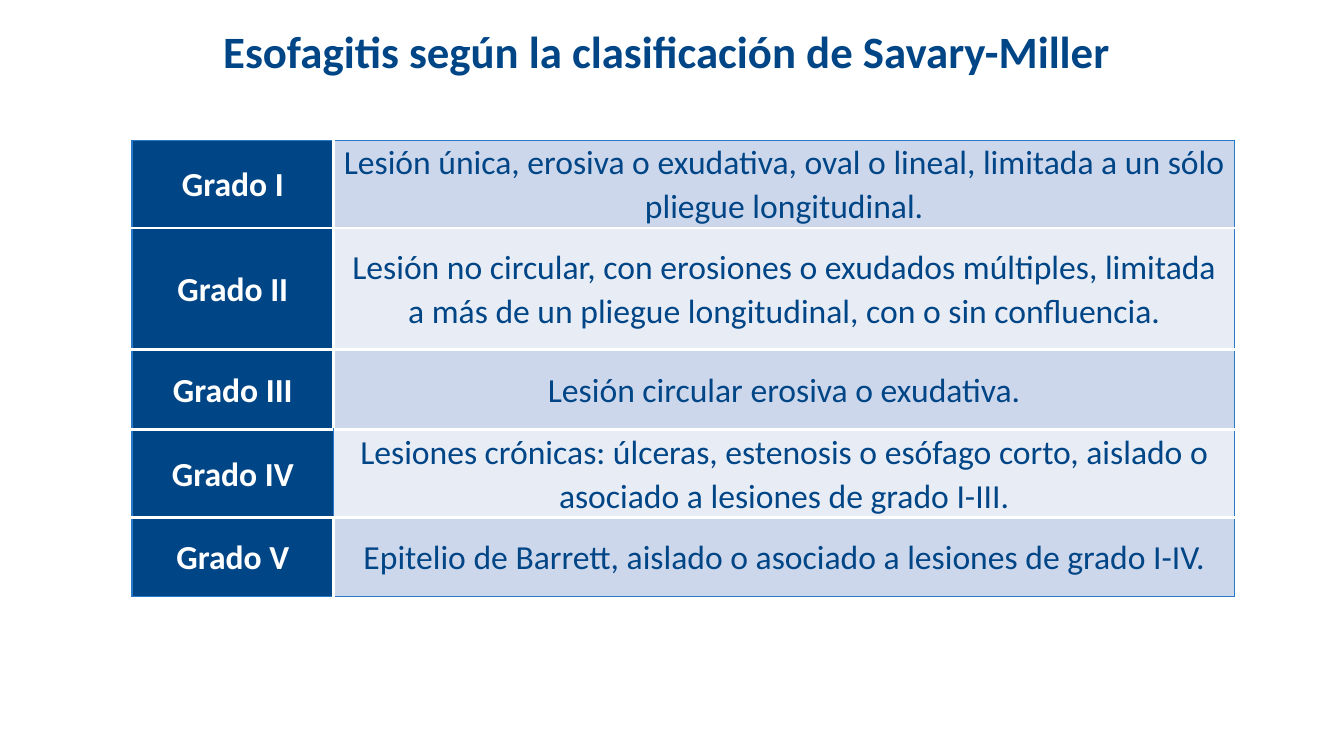
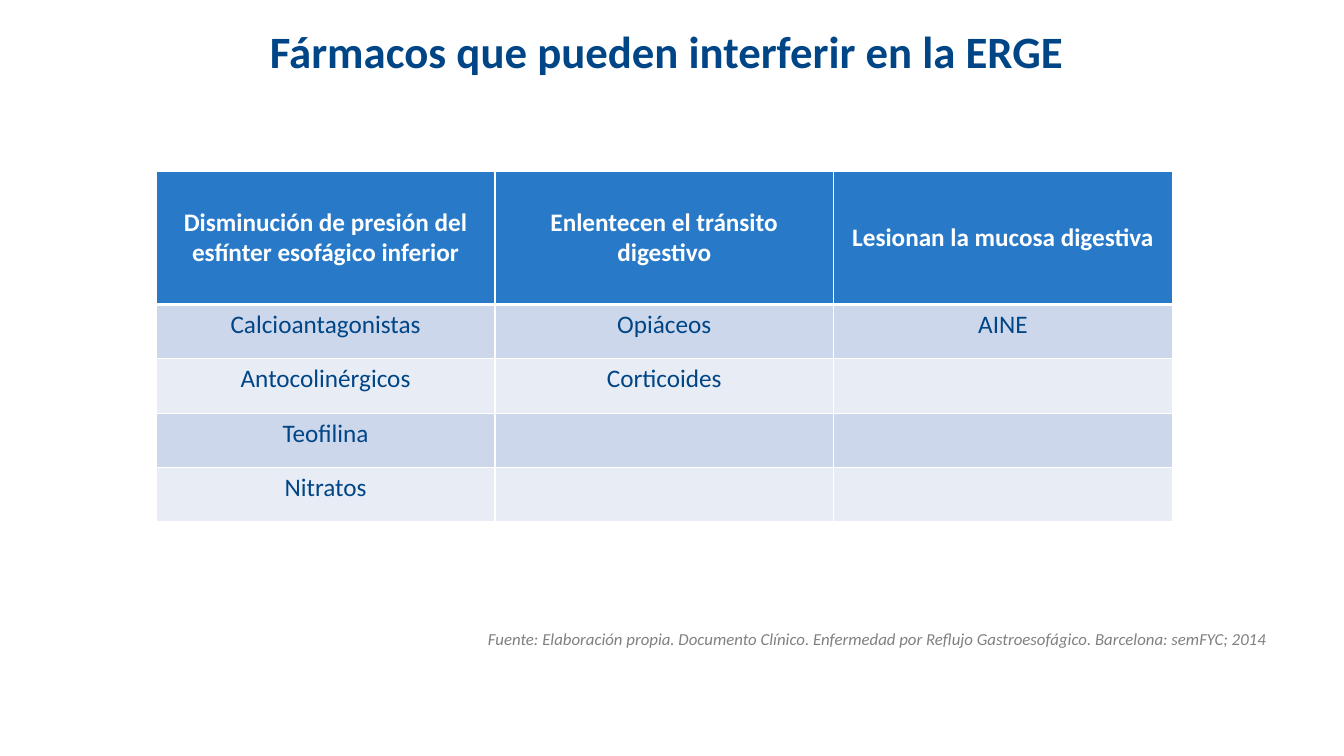
from dataclasses import dataclass
from typing import NamedTuple

from lxml import etree
from pptx import Presentation, util as u
from pptx.dml.color import RGBColor
from pptx.enum import text
from pptx.oxml import ns

NAVY = RGBColor(0x00, 0x45, 0x86)
BLUE = RGBColor(0x28, 0x7A, 0xC8)
WHITE = RGBColor(0xFF, 0xFF, 0xFF)
GRAY = RGBColor(0x80, 0x80, 0x80)
BANDS = (RGBColor(0xCD, 0xD7, 0xEB), RGBColor(0xE8, 0xEC, 0xF5))
FONT = "Calibri"

# The slide is a grid of 80 columns by 45 rows of square units.
SLIDE_WIDTH, SLIDE_HEIGHT = u.Inches(13.33), u.Inches(7.5)
GRID_COLUMNS, GRID_ROWS = 80, 45


class Frame(NamedTuple):
    left: float
    top: float
    width: float
    height: float


class Line(NamedTuple):
    color: RGBColor
    width: float


class Borders(NamedTuple):
    left: Line
    right: Line
    top: Line
    bottom: Line


@dataclass(frozen=True)
class Style:
    size: float
    color: RGBColor
    bold: bool = False
    italic: bool = False
    align: text.PP_ALIGN = text.PP_ALIGN.CENTER
    spacing: float | None = None


@dataclass(frozen=True)
class CellLook:
    style: Style
    fill: RGBColor
    borders: Borders
    anchor: text.MSO_ANCHOR = text.MSO_ANCHOR.MIDDLE
    tight: bool = False


TITLE_FRAME = Frame(4, 1, 72, 4)
SOURCE_FRAME = Frame(0, 37.14, 76, 1.9)
TITLE_STYLE = Style(32, NAVY, bold=True)
SOURCE_STYLE = Style(12, GRAY, italic=True, align=text.PP_ALIGN.RIGHT)

GRADE_STYLE = Style(24, WHITE, bold=True, spacing=1.07)
LESION_STYLE = Style(24, NAVY, spacing=1.07)
HEADER_STYLE = Style(18, WHITE, bold=True)
DRUG_STYLE = Style(18, NAVY)

OUTLINE = Line(BLUE, 1)
DIVIDER = Line(WHITE, 2.25)
HAIRLINE = Line(WHITE, 1)
HEADER_RULE = Line(WHITE, 3)

GRADES = (
    ("Grado I", "Lesión única, erosiva o exudativa, oval o lineal, "
                "limitada a un sólo pliegue longitudinal."),
    ("Grado II", "Lesión no circular, con erosiones o exudados múltiples, limitada "
                 "a más de un pliegue longitudinal, con o sin confluencia."),
    ("Grado III", "Lesión circular erosiva o exudativa."),
    ("Grado IV", "Lesiones crónicas: úlceras, estenosis o esófago corto, aislado o "
                 "asociado a lesiones de grado I-III."),
    ("Grado V", "Epitelio de Barrett, aislado o asociado a lesiones de grado I-IV."),
)
BLUE_DIVIDER_ROW = 3

DRUGS = (
    ("Disminución de presión del esfínter esofágico inferior",
     "Enlentecen el tránsito digestivo", "Lesionan la mucosa digestiva"),
    ("Calcioantagonistas", "Opiáceos", "AINE"),
    ("Antocolinérgicos", "Corticoides", ""),
    ("Teofilina", "", ""),
    ("Nitratos", "", ""),
)


def across(columns: float) -> int:
    return round(SLIDE_WIDTH * columns / GRID_COLUMNS)


def down(rows: float) -> int:
    return round(SLIDE_HEIGHT * rows / GRID_ROWS)


def write(para, words: str, style: Style) -> None:
    para.alignment = style.align
    if style.spacing:
        para.line_spacing = style.spacing
    span = para.add_run()
    span.text = words
    font = span.font
    font.name, font.size = FONT, u.Pt(style.size)
    font.bold, font.italic = style.bold, style.italic
    font.color.rgb = style.color


def draw_borders(cell, borders: Borders) -> None:
    properties = cell._tc.get_or_add_tcPr()
    for tag, line in zip(("a:lnL", "a:lnR", "a:lnT", "a:lnB"), borders):
        edge = etree.SubElement(properties, ns.qn(tag), w=str(u.Pt(line.width)))
        solid = etree.SubElement(edge, ns.qn("a:solidFill"))
        etree.SubElement(solid, ns.qn("a:srgbClr"), val=str(line.color))


def format_cell(cell, words: str, look: CellLook) -> None:
    draw_borders(cell, look.borders)
    cell.fill.solid()
    cell.fill.fore_color.rgb = look.fill
    cell.vertical_anchor = look.anchor
    if look.tight:
        cell.margin_left = cell.margin_right = u.Inches(0.07)
        cell.margin_top = cell.margin_bottom = 0
    if words:
        write(cell.text_frame.paragraphs[0], words, look.style)


def grade_look(row: int, column: int) -> CellLook:
    """Blue outer edges and white dividers, with one blue divider between columns."""
    middle = OUTLINE if row == BLUE_DIVIDER_ROW else DIVIDER
    borders = Borders(
        left=middle if column else OUTLINE,
        right=OUTLINE if column else middle,
        top=DIVIDER if row else OUTLINE,
        bottom=OUTLINE if row == len(GRADES) - 1 else DIVIDER,
    )
    if column:
        return CellLook(LESION_STYLE, BANDS[row % 2], borders, tight=True)
    return CellLook(GRADE_STYLE, NAVY, borders, tight=True)


def drug_look(row: int, column: int) -> CellLook:
    if row == 0:
        borders = Borders(HAIRLINE, HAIRLINE, HAIRLINE, HEADER_RULE)
        return CellLook(HEADER_STYLE, BLUE, borders)
    top = HEADER_RULE if row == 1 else HAIRLINE
    borders = Borders(HAIRLINE, HAIRLINE, top, HAIRLINE)
    return CellLook(DRUG_STYLE, BANDS[(row - 1) % 2], borders, text.MSO_ANCHOR.TOP)


def add_grid(page, left: float, top: float, widths: tuple, heights: tuple,
             content: tuple, look_at) -> None:
    table = page.shapes.add_table(
        len(heights), len(widths), across(left), down(top),
        across(sum(widths)), down(sum(heights))).table
    table.first_row = table.horz_banding = False
    for column, width in zip(table.columns, widths):
        column.width = across(width)
    for row, height in zip(table.rows, heights):
        row.height = down(height)
    for i, line in enumerate(content):
        for j, words in enumerate(line):
            format_cell(table.cell(i, j), words, look_at(i, j))


def place(box, frame: Frame) -> None:
    box.left, box.top = across(frame.left), down(frame.top)
    box.width, box.height = across(frame.width), down(frame.height)


def add_page(deck, title: str):
    page = deck.slides.add_slide(deck.slide_layouts[5])
    box = page.shapes.title
    place(box, TITLE_FRAME)
    box.text_frame.vertical_anchor = text.MSO_ANCHOR.MIDDLE
    write(box.text_frame.paragraphs[0], title, TITLE_STYLE)
    return page


def add_source(page, words: str) -> None:
    box = page.shapes.add_textbox(0, 0, 0, 0)
    place(box, SOURCE_FRAME)
    box.text_frame.word_wrap = True
    write(box.text_frame.paragraphs[0], words, SOURCE_STYLE)


def main() -> None:
    deck = Presentation()
    deck.slide_width, deck.slide_height = SLIDE_WIDTH, SLIDE_HEIGHT

    page = add_page(deck, "Esofagitis según la clasificación de Savary-Miller ")
    add_grid(page, 7.86, 8.34, (12, 53.64), (4.74, 7.26, 4.74, 4.74, 4.74),
             GRADES, grade_look)

    page = add_page(deck, "Fármacos que pueden interferir en la ERGE ")
    add_grid(page, 9.3, 10.2, (20.16,) * 3, (7.92,) + (3.24,) * 4, DRUGS, drug_look)
    add_source(page, "Fuente: Elaboración propia. Documento Clínico. Enfermedad por "
                     "Reflujo Gastroesofágico. Barcelona: semFYC; 2014")

    deck.save("out.pptx")


if __name__ == "__main__":
    main()
